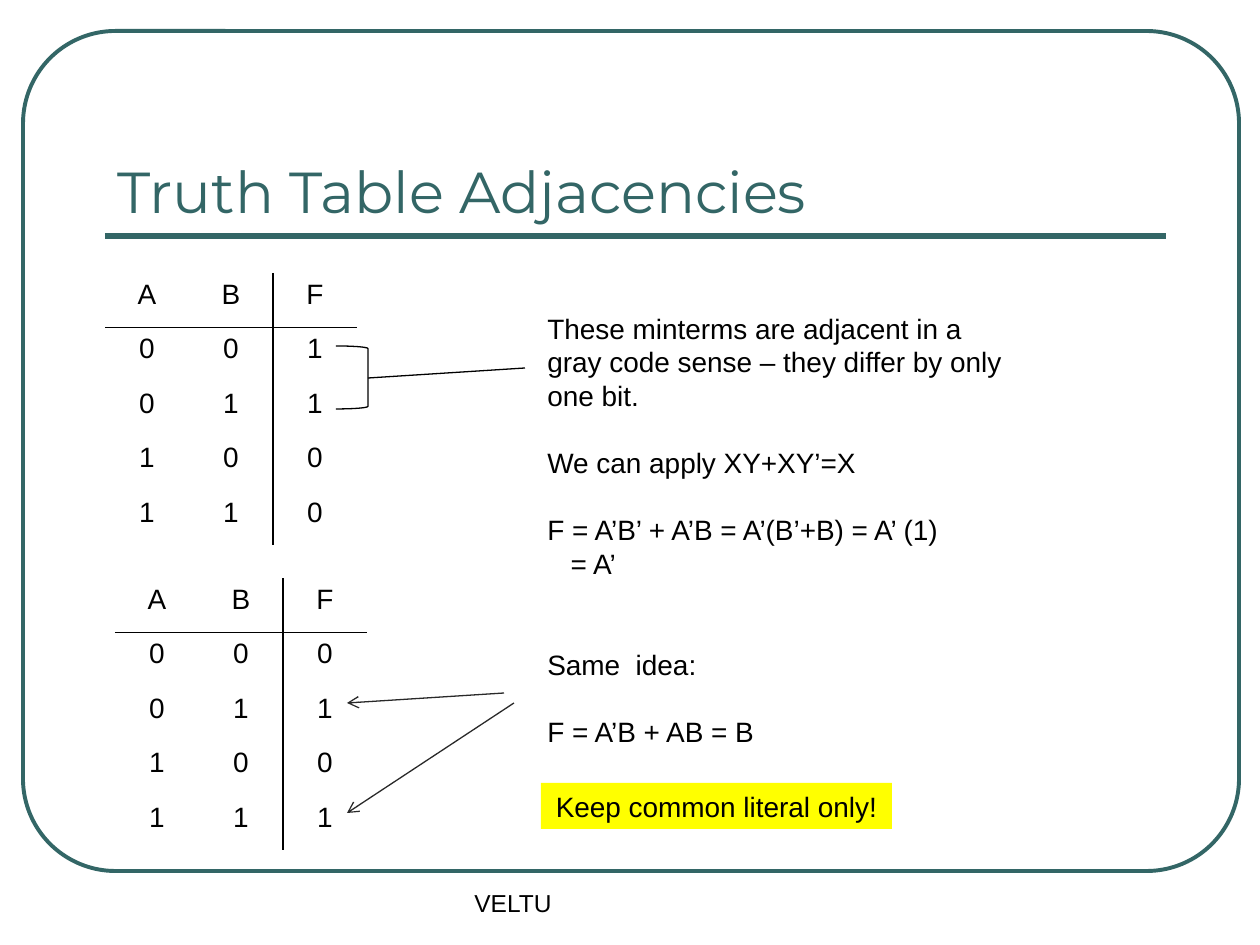
import pptx
import pptx.util
import pptx.dml.color
import pptx.enum.shapes
import pptx.enum.text
import pptx.oxml
import pptx.oxml.ns

RGBColor = pptx.dml.color.RGBColor
TEAL = RGBColor(0x33, 0x66, 0x66)
BLACK = RGBColor(0, 0, 0)
CHARCOAL = RGBColor(0x29, 0x29, 0x29)
YELLOW = RGBColor(0xFF, 0xFF, 0)

SHAPE = pptx.enum.shapes.MSO_SHAPE
ALIGN = pptx.enum.text.PP_ALIGN
ANCHOR = pptx.enum.text.MSO_ANCHOR
NAMESPACE = pptx.oxml.ns.nsdecls("a")

TITLE = "Truth Table Adjacencies"
FOOTER = "VELTU"
KEY_RULE = "Keep common literal only!"
INPUTS = ["00", "01", "10", "11"]
TRUTH_TABLES = [((105, 273), "1100"), ((115, 578), "0101")]
COLUMN_WIDTH, ROW_HEIGHT = 84, 54.5
LINE_GAP = 19.2
NOTES = [
    ((535, 305, 494, 285), [
        ("These minterms are adjacent in a gray code sense – they differ by only one bit.", 0, 0),
        ("We can apply XY+XY’=X", LINE_GAP, 0),
        ("F = A’B’ + A’B = A’(B’+B) = A’ (1)", LINE_GAP, 0),
        ("= A’", 0, 13.3),
    ]),
    ((535, 641, 494, 115), [
        ("Same  idea:", 0, 0),
        ("F = A’B + AB = B", LINE_GAP, 0),
    ]),
]
LINES = [
    ((105, 236), (1166, 236), TEAL, 3, False),
    ((368, 378), (525, 368), BLACK, 0.75, False),
    ((504, 693), (347, 703), CHARCOAL, 0.75, True),
    ((514, 703), (347, 813), CHARCOAL, 0.75, True),
]


def emu(px):
    return round(px * 914400 / 126)


def style(para, size=16, font="Arial", color=BLACK):
    para.font.size = pptx.util.Pt(size)
    para.font.name = font
    para.font.color.rgb = color


def add_outline(kind, area, color, width, rounding):
    shape = page.shapes.add_shape(kind, *map(emu, area))
    shape.shadow.inherit = False
    shape.adjustments[0] = rounding
    shape.fill.background()
    shape.line.color.rgb = color
    shape.line.width = pptx.util.Pt(width)


def add_text(area, paragraphs, anchor=ANCHOR.TOP, **look):
    box = page.shapes.add_textbox(*map(emu, area))
    frame = box.text_frame
    frame.word_wrap = True
    frame.vertical_anchor = anchor
    for index, (text, before, indent) in enumerate(paragraphs):
        para = frame.add_paragraph() if index else frame.paragraphs[0]
        para.text = text
        para.space_before = pptx.util.Pt(before)
        if indent:
            para._p.get_or_add_pPr().set("marL", str(pptx.util.Pt(indent)))
        style(para, **look)


def add_line(start, end, color, width, arrow):
    line = page.shapes.add_connector(
        pptx.enum.shapes.MSO_CONNECTOR.STRAIGHT, *map(emu, start + end))
    line.line.color.rgb = color
    line.line.width = pptx.util.Pt(width)
    if arrow:
        line.line._get_or_add_ln().append(
            pptx.oxml.parse_xml(f'<a:tailEnd {NAMESPACE} type="arrow"/>'))
    line._element.spPr.append(pptx.oxml.parse_xml(f"<a:effectLst {NAMESPACE}/>"))


def add_borders(cell, drawn_sides):
    properties = cell._tc.get_or_add_tcPr()
    solid = f'<a:solidFill><a:srgbClr val="{BLACK}"/></a:solidFill>'
    for position, side in enumerate("LRTB"):
        paint = solid if side in drawn_sides else "<a:noFill/>"
        properties.insert(position, pptx.oxml.parse_xml(
            f'<a:ln{side} {NAMESPACE} w="12700">{paint}</a:ln{side}>'))


def add_truth_table(corner, outputs):
    rows = ["ABF"] + [pair + output for pair, output in zip(INPUTS, outputs)]
    size = (COLUMN_WIDTH * 3, ROW_HEIGHT * len(rows))
    table = page.shapes.add_table(len(rows), 3, *map(emu, corner + size)).table
    table.first_row = table.horz_banding = False
    for row_index, values in enumerate(rows):
        for column_index, value in enumerate(values):
            cell = table.cell(row_index, column_index)
            cell.fill.background()
            cell.text = value
            para = cell.text_frame.paragraphs[0]
            para.alignment = ALIGN.CENTER
            style(para)
            across = ["", "R", "L"][column_index]
            down = {0: "B", 1: "T"}.get(row_index, "")
            add_borders(cell, across + down)


deck = pptx.Presentation()
deck.slide_width, deck.slide_height = emu(1260), emu(945)
page = deck.slides.add_slide(deck.slide_layouts[6])

add_outline(SHAPE.ROUNDED_RECTANGLE, (23, 31, 1216, 840), TEAL, 2.25, 0.11)
add_text((105, 73, 1060, 158), [(TITLE, 0, 0)], ANCHOR.BOTTOM,
         size=33, font="Montserrat", color=TEAL)
for corner, outputs in TRUTH_TABLES:
    add_truth_table(corner, outputs)
add_text((462, 882, 398, 63), [(FOOTER, 0, 0)], size=14)
for area, paragraphs in NOTES:
    add_text(area, paragraphs)
add_outline(SHAPE.RIGHT_BRACKET, (336, 346, 32, 63), BLACK, 0.75, 0.08)
for line in LINES:
    add_line(*line)

banner = page.shapes.add_shape(SHAPE.RECTANGLE, *map(emu, (541, 783, 351, 46)))
banner.shadow.inherit = False
banner.fill.solid()
banner.fill.fore_color.rgb = YELLOW
banner.line.fill.background()
banner.text_frame.word_wrap = False
banner.text_frame.text = KEY_RULE
banner_para = banner.text_frame.paragraphs[0]
banner_para.alignment = ALIGN.CENTER
style(banner_para)

deck.save("out.pptx")
